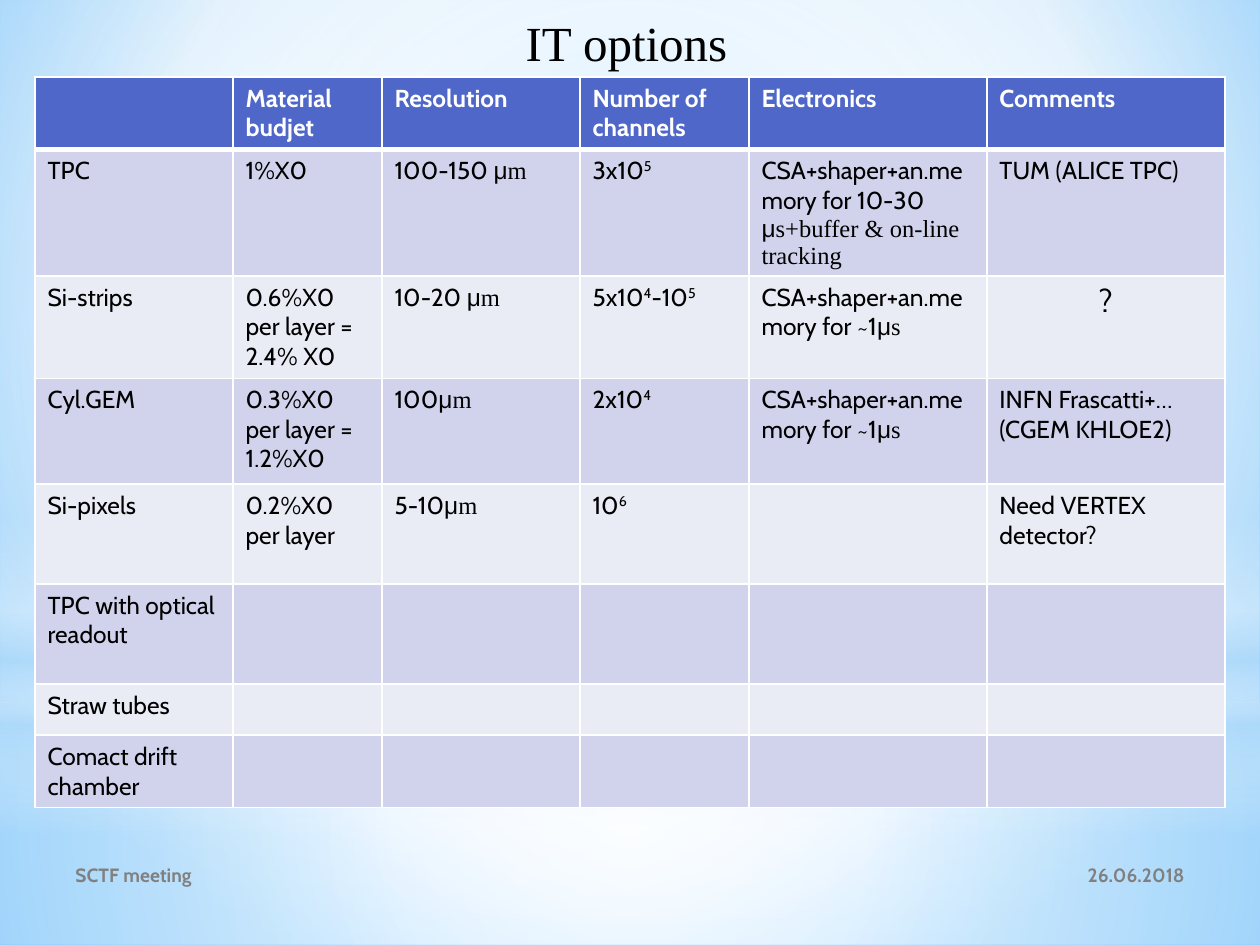
from dataclasses import dataclass

from pptx import Presentation
from pptx.dml.color import RGBColor
from pptx.enum import shapes, text
from pptx.oxml import parse_xml
from pptx.oxml.ns import nsdecls, qn
from pptx.util import Pt

PX = 914400 / 126  # EMU per px


@dataclass(frozen=True)
class Theme:
    body: str = "Cabin"
    serif: str = "Times New Roman"
    symbol: str = "Arial"
    title_size: int = 28
    mark_size: int = 18
    cell_size: int = 14
    footer_size: int = 11
    black: str = "000000"
    white: str = "FFFFFF"
    grey: str = "808080"
    header: str = "4E67C8"
    bands: tuple = ("D0D3EB", "E9EBF5")
    sky: str = "9ED5FF"
    deep_sky: str = "5BB9FF"
    haze: str = "B4DCFA"


T = Theme()
COLUMNS = (198, 149, 198, 169, 238, 238)
ROWS = (69, 126, 97, 106, 100, 100, 49, 66)
# "^" raises the next character; "μ" starts a unit in its own fonts
OPTIONS = (
    ("", "Material budjet", "Resolution", "Number of channels", "Electronics", "Comments"),
    ("TPC", "1%X0", "100-150 μm", "3x10^5",
     "CSA+shaper+an.memory for 10-30 μs+buffer & on-line tracking", "TUM (ALICE TPC)"),
    ("Si-strips", "0.6%X0 per layer = 2.4% X0", "10-20 μm", "5x10^4-10^5",
     "CSA+shaper+an.memory for ~1μs", "?"),
    ("Cyl.GEM", "0.3%X0 per layer = 1.2%X0", "100μm", "2x10^4",
     "CSA+shaper+an.memory for ~1μs", "INFN Frascatti+…\n(CGEM KHLOE2)"),
    ("Si-pixels", "0.2%X0 per layer", "5-10μm", "10^6", "", "Need VERTEX detector?"),
    ("TPC with optical readout",),
    ("Straw tubes",),
    ("Comact drift chamber",),
)


def px(*lengths):
    return [round(n * PX) for n in lengths]


def split_runs(line):
    """Yield (text, font or None, raised) for each run of a line."""
    plain, mu, unit = line.partition("μ")
    first, *raised = plain.split("^")
    runs = [(first, None, False)]
    for part in raised:
        runs += [(part[0], None, True), (part[1:], None, False)]
    runs += [(mu, T.symbol, False), (unit, T.serif, False)]
    return [run for run in runs if run[0]]


def write(tf, content, size=T.cell_size, font=T.body, color=T.black, bold=False,
          align=text.PP_ALIGN.LEFT):
    for i, line in enumerate(content.split("\n")):
        p = tf.add_paragraph() if i else tf.paragraphs[0]
        p.alignment = align
        for words, own_font, raised in split_runs(line):
            r = p.add_run()
            r.text = words
            r.font.size, r.font.bold = Pt(size), bold
            r.font.name = own_font or font
            r.font.color.rgb = RGBColor.from_string(color)
            if raised:
                r.font._element.set("baseline", "30000")


def set_gradient(target, element, stops, centre=None):
    """Stops are (position, colour, opacity); without a centre it runs downwards."""
    target.fill.gradient()
    grad = element.find(".//" + qn("a:gradFill"))
    marks = "".join(
        f'<a:gs pos="{pos * 1000}"><a:srgbClr val="{color}">'
        f'<a:alpha val="{alpha * 1000}"/></a:srgbClr></a:gs>'
        for pos, color, alpha in stops)
    if centre:
        edges = " ".join(f'{k}="{v * 1000}"' for k, v in zip("ltrb", centre))
        shade = f'<a:path path="circle"><a:fillToRect {edges}/></a:path>'
    else:
        shade = '<a:lin ang="5400000" scaled="0"/>'
    grad.getparent().replace(grad, parse_xml(
        f'<a:gradFill {nsdecls("a")} rotWithShape="1">'
        f'<a:gsLst>{marks}</a:gsLst>{shade}</a:gradFill>'))


def add_glow(slide, kind, box, stops, centre=(50, 50, 50, 50)):
    sp = slide.shapes.add_shape(kind, *px(*box))
    sp.shadow.inherit = False
    sp.line.fill.background()
    set_gradient(sp, sp._element, stops, centre)


def add_backdrop(slide):
    rect, oval = shapes.MSO_SHAPE.RECTANGLE, shapes.MSO_SHAPE.OVAL
    set_gradient(slide.background, slide._element,
                 [(0, T.sky, 100), (60, T.white, 100), (100, T.deep_sky, 100)],
                 (20, 10, 20, 60))
    add_glow(slide, rect, (0, 703, 1260, 242),
             [(0, T.white, 91), (37, T.white, 76), (100, T.haze, 79)])
    add_glow(slide, rect, (0, 0, 1260, 703),
             [(0, T.white, 89), (48, T.white, 62), (100, T.haze, 79)])
    add_glow(slide, rect, (0, 519, 1260, 315),
             [(0, T.white, 0), (29, T.white, 30), (45, T.haze, 40),
              (55, T.white, 26), (65, T.haze, 60), (100, T.white, 0)], centre=None)
    add_glow(slide, oval, (0, 220, 1260, 703),
             [(0, T.white, 100), (56, T.white, 0)])


def style_cell(cell, row, color):
    widths = {"L": 1, "R": 1, "T": 3 if row == 1 else 1, "B": 3 if row == 0 else 1}
    tc_pr = cell._tc.get_or_add_tcPr()
    for side, width in widths.items():
        tc_pr.append(parse_xml(
            f'<a:ln{side} {nsdecls("a")} w="{Pt(width)}"><a:solidFill>'
            f'<a:srgbClr val="{T.white}"/></a:solidFill></a:ln{side}>'))
    cell.fill.solid()
    cell.fill.fore_color.rgb = RGBColor.from_string(color)


def add_options_table(slide):
    table = slide.shapes.add_table(
        len(ROWS), len(COLUMNS), *px(35, 77, sum(COLUMNS), sum(ROWS))).table
    for column, width in zip(table.columns, px(*COLUMNS)):
        column.width = width
    for row, height in zip(table.rows, px(*ROWS)):
        row.height = height
    for i, row in enumerate(table.rows):
        for cell in row.cells:
            style_cell(cell, i, T.bands[(i - 1) % 2] if i else T.header)
        for cell, content in zip(row.cells, OPTIONS[i]):
            if i == 0:
                write(cell.text_frame, content, color=T.white, bold=True)
            elif content == "?":
                write(cell.text_frame, content, size=T.mark_size,
                      align=text.PP_ALIGN.CENTER)
            else:
                write(cell.text_frame, content)


def add_title(slide, content):
    title = slide.shapes.title
    title.left, title.top, title.width, title.height = px(513, 6, 229, 72)
    tf = title.text_frame
    tf.word_wrap = False
    tf.auto_size = text.MSO_AUTO_SIZE.SHAPE_TO_FIT_TEXT
    tf.vertical_anchor = text.MSO_ANCHOR.TOP
    write(tf, content, size=T.title_size, font=T.serif)
    slide.shapes._spTree.append(title._element)  # in front of the backdrop


def add_footer(slide, content, left, width, align):
    tf = slide.shapes.add_textbox(*px(left, 850, width, 50)).text_frame
    tf.word_wrap = True
    tf.vertical_anchor = text.MSO_ANCHOR.MIDDLE
    write(tf, content, size=T.footer_size, color=T.grey, bold=True, align=align)


def main():
    prs = Presentation()
    prs.slide_width, prs.slide_height = px(1260, 945)
    slide = prs.slides.add_slide(prs.slide_layouts[5])
    add_backdrop(slide)
    add_options_table(slide)
    add_title(slide, "IT options")
    add_footer(slide, "26.06.2018", 850, 347, text.PP_ALIGN.RIGHT)
    add_footer(slide, "SCTF meeting", 63, 462, text.PP_ALIGN.LEFT)
    prs.save("out.pptx")


if __name__ == "__main__":
    main()
